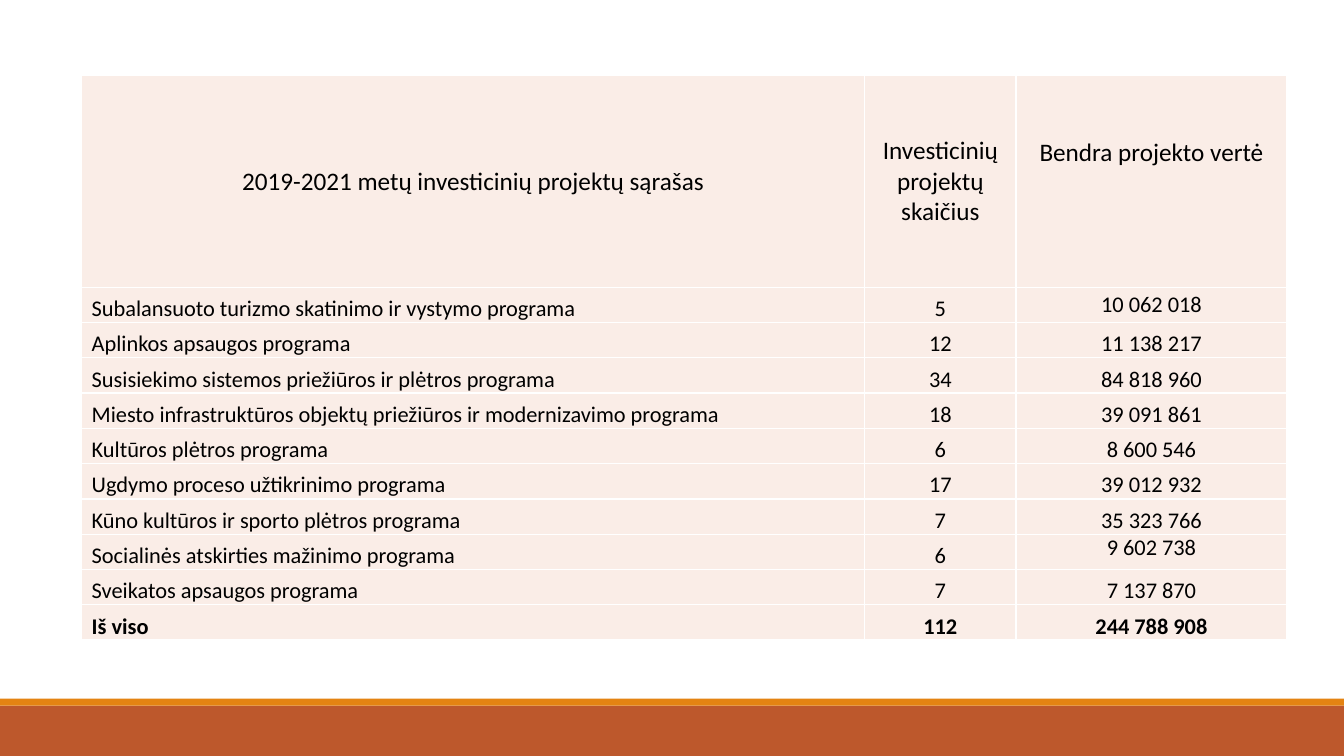
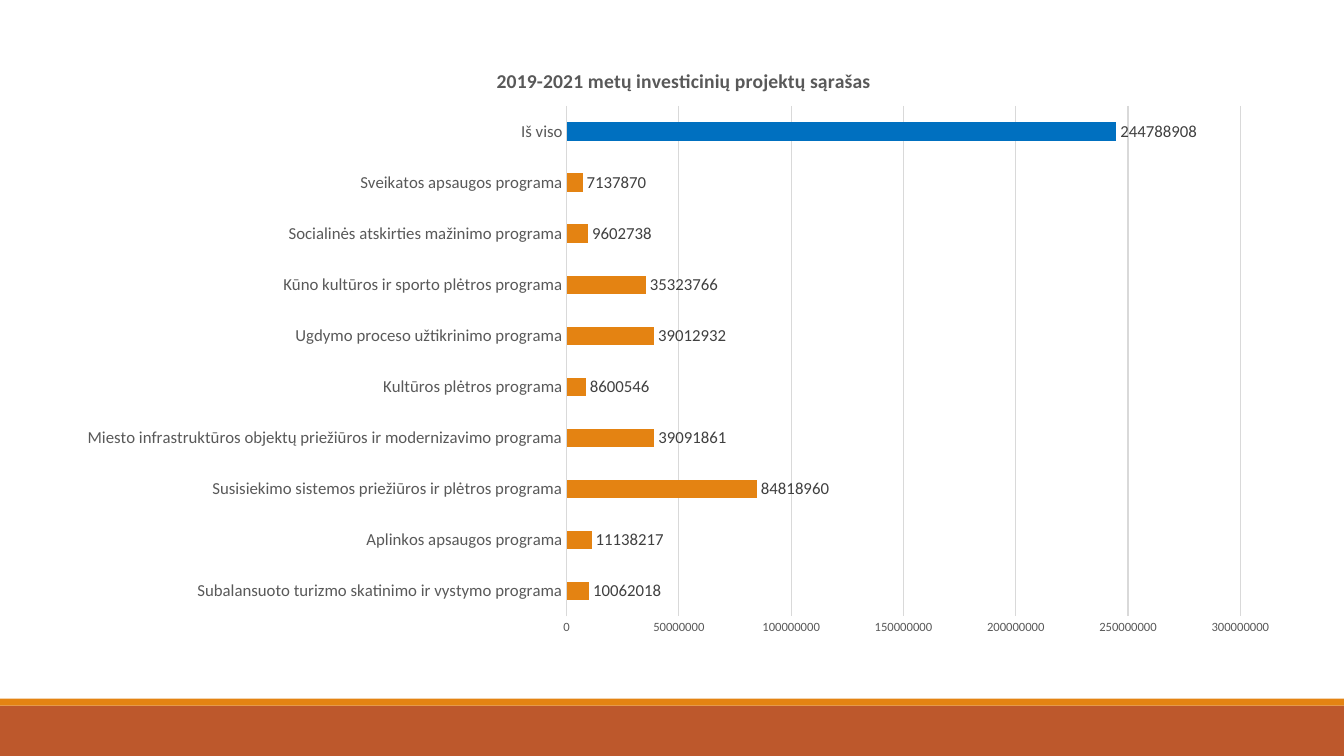
"""Builds two slides on the 2019-2021 investment projects: a table and a bar chart."""
import dataclasses

import pptx
import pptx.chart.data
import pptx.dml.color
import pptx.enum.chart
import pptx.enum.shapes
import pptx.enum.text
import pptx.oxml
import pptx.oxml.ns
import pptx.util

Pt = pptx.util.Pt
RGB = pptx.dml.color.RGBColor.from_string
ALIGN = pptx.enum.text.PP_ALIGN
ANCHOR = pptx.enum.text.MSO_ANCHOR
CHART = pptx.enum.chart


@dataclasses.dataclass(frozen=True)
class Theme:
    font: str = "Calibri"
    band: str = "BD582C"
    accent: str = "E48312"
    total: str = "0070C0"
    cell: str = "FAEDE7"
    border: str = "FFFFFF"
    text: str = "000000"
    muted: str = "595959"
    label: str = "404040"
    grid: str = "D9D9D9"
    header_size: int = 18
    body_size: int = 16
    title_size: int = 14
    label_size: int = 12
    axis_size: int = 9


HEADING = "2019-2021 metų investicinių projektų sąrašas"
HEADERS = [HEADING, "Investicinių projektų skaičius", "Bendra projekto vertė"]
PROGRAMMES = [
    ("Subalansuoto turizmo skatinimo ir vystymo programa", 5, 10062018),
    ("Aplinkos apsaugos programa", 12, 11138217),
    ("Susisiekimo sistemos priežiūros ir plėtros programa", 34, 84818960),
    ("Miesto infrastruktūros objektų priežiūros ir modernizavimo programa", 18, 39091861),
    ("Kultūros plėtros programa", 6, 8600546),
    ("Ugdymo proceso užtikrinimo programa", 17, 39012932),
    ("Kūno kultūros ir sporto plėtros programa", 7, 35323766),
    ("Socialinės atskirties mažinimo programa", 6, 9602738),
    ("Sveikatos apsaugos programa", 7, 7137870),
]
TOTAL = ("Iš viso", sum(row[1] for row in PROGRAMMES), sum(row[2] for row in PROGRAMMES))
ROWS = PROGRAMMES + [TOTAL]


class Deck:
    def __init__(self, theme):
        self.theme = theme
        self.presentation = pptx.Presentation()
        self.presentation.slide_width = Pt(960)
        self.presentation.slide_height = Pt(540)
        self.slide = None

    def add_slide(self):
        self.slide = self.presentation.slides.add_slide(self.presentation.slide_layouts[6])
        self.add_band(504, 36, self.theme.band)
        self.add_band(499, 5, self.theme.accent)

    def add_band(self, top, height, color):
        shape = self.slide.shapes.add_shape(
            pptx.enum.shapes.MSO_SHAPE.RECTANGLE, 0, Pt(top), Pt(960), Pt(height))
        shape.shadow.inherit = False
        shape.fill.solid()
        shape.fill.fore_color.rgb = RGB(color)
        shape.line.fill.background()

    def style_font(self, font, size, color, bold=False):
        font.name = self.theme.font
        font.size = Pt(size)
        font.bold = bold
        font.color.rgb = RGB(color)

    def add_table(self, left, top, column_widths, row_heights):
        frame = self.slide.shapes.add_table(
            len(row_heights), len(column_widths), Pt(left), Pt(top),
            Pt(sum(column_widths)), Pt(sum(row_heights)))
        table = frame.table
        table.first_row = table.horz_banding = False
        for column, width in zip(table.columns, column_widths):
            column.width = Pt(width)
        for row, height in zip(table.rows, row_heights):
            row.height = Pt(height)
        return table

    def fill_cell(self, cell, text, size, anchor, align=ALIGN.CENTER, bold=False):
        properties = cell._tc.get_or_add_tcPr()
        for side in ("lnL", "lnR", "lnT", "lnB"):
            properties.append(pptx.oxml.parse_xml(
                f'<a:{side} {pptx.oxml.ns.nsdecls("a")} w="{Pt(1)}"><a:solidFill>'
                f'<a:srgbClr val="{self.theme.border}"/></a:solidFill></a:{side}>'))
        cell.fill.solid()
        cell.fill.fore_color.rgb = RGB(self.theme.cell)
        cell.margin_left = cell.margin_right = cell.margin_top = cell.margin_bottom = 0
        cell.vertical_anchor = anchor
        cell.text_frame.text = text
        paragraph = cell.text_frame.paragraphs[0]
        paragraph.alignment = align
        self.style_font(paragraph.runs[0].font, size, self.theme.text, bold)

    def place_chart_part(self, element, **fractions):
        layout = element.find(pptx.oxml.ns.qn("c:layout"))
        if layout is not None:
            element.remove(layout)
        target = '<c:layoutTarget val="inner"/>' if "w" in fractions else ""
        modes = '<c:xMode val="edge"/><c:yMode val="edge"/>'
        values = "".join(f'<c:{name} val="{value}"/>' for name, value in fractions.items())
        index = 1 if element.find(pptx.oxml.ns.qn("c:tx")) is not None else 0
        element.insert(index, pptx.oxml.parse_xml(
            f'<c:layout {pptx.oxml.ns.nsdecls("c")}><c:manualLayout>'
            f'{target}{modes}{values}</c:manualLayout></c:layout>'))

    def style_axis(self, axis, size):
        axis.major_tick_mark = axis.minor_tick_mark = CHART.XL_TICK_MARK.NONE
        self.style_font(axis.tick_labels.font, size, self.theme.muted)

    def style_line(self, line):
        line.color.rgb = RGB(self.theme.grid)
        line.width = Pt(0.75)

    def add_bar_chart(self, left, top, width, height, title, categories, values):
        theme = self.theme
        data = pptx.chart.data.CategoryChartData(number_format="0")
        data.categories = categories
        data.add_series("Series 1", values)
        chart = self.slide.shapes.add_chart(
            CHART.XL_CHART_TYPE.BAR_CLUSTERED, Pt(left), Pt(top), Pt(width), Pt(height), data).chart
        chart.has_legend = False
        chart.font.name = theme.font

        chart.has_title = True
        chart.chart_title.text_frame.text = title
        run = chart.chart_title.text_frame.paragraphs[0].runs[0]
        self.style_font(run.font, theme.title_size, theme.muted, True)
        self.place_chart_part(chart.chart_title._element, x=0.35, y=0.04)
        self.place_chart_part(chart._chartSpace.chart.plotArea, x=0.41, y=0.11, w=0.55, h=0.84)

        self.style_axis(chart.category_axis, theme.label_size)
        self.style_line(chart.category_axis.format.line)
        self.style_axis(chart.value_axis, theme.axis_size)
        chart.value_axis.format.line.fill.background()
        chart.value_axis.maximum_scale = 300000000
        chart.value_axis.minimum_scale = 0
        chart.value_axis.major_unit = 50000000
        self.style_line(chart.value_axis.major_gridlines.format.line)

        plot = chart.plots[0]
        plot.gap_width = 182
        plot.vary_by_categories = False
        series = plot.series[0]
        total_bar = series.points[len(values) - 1]
        for item, color in ((series, theme.accent), (total_bar, theme.total)):
            item.format.fill.solid()
            item.format.fill.fore_color.rgb = RGB(color)
        labels = series.data_labels
        labels.show_value = True
        labels.number_format = "0"
        labels.number_format_is_linked = False
        labels.position = CHART.XL_LABEL_POSITION.OUTSIDE_END
        self.style_font(labels.font, theme.label_size, theme.label)


def build_table_slide(deck):
    deck.add_slide()
    table = deck.add_table(58.3, 54, [559.4, 108, 193.6], [151.2] + [25.2] * len(ROWS))
    for column, header in enumerate(HEADERS):
        deck.fill_cell(table.cell(0, column), header, deck.theme.header_size, ANCHOR.MIDDLE)
    value_header = table.cell(0, 2)
    value_header.vertical_anchor = ANCHOR.TOP
    value_header.margin_top = Pt(44)

    value_anchors = {1: ANCHOR.MIDDLE, 8: ANCHOR.TOP}
    for index, (name, count, value) in enumerate(ROWS, start=1):
        texts = [name, str(count), f"{value:,}".replace(",", " ")]
        for column, text in enumerate(texts):
            anchor = value_anchors.get(index, ANCHOR.BOTTOM) if column == 2 else ANCHOR.BOTTOM
            align = ALIGN.CENTER if column else ALIGN.LEFT
            deck.fill_cell(table.cell(index, column), text, deck.theme.body_size, anchor,
                           align, bold=index == len(ROWS))
        table.cell(index, 0).margin_left = Pt(7.2)


def build_chart_slide(deck):
    deck.add_slide()
    deck.add_bar_chart(46, 28, 875, 434, HEADING,
                       [row[0] for row in ROWS], [row[2] for row in ROWS])


def main():
    deck = Deck(Theme())
    build_table_slide(deck)
    build_chart_slide(deck)
    deck.presentation.save("out.pptx")


if __name__ == "__main__":
    main()
